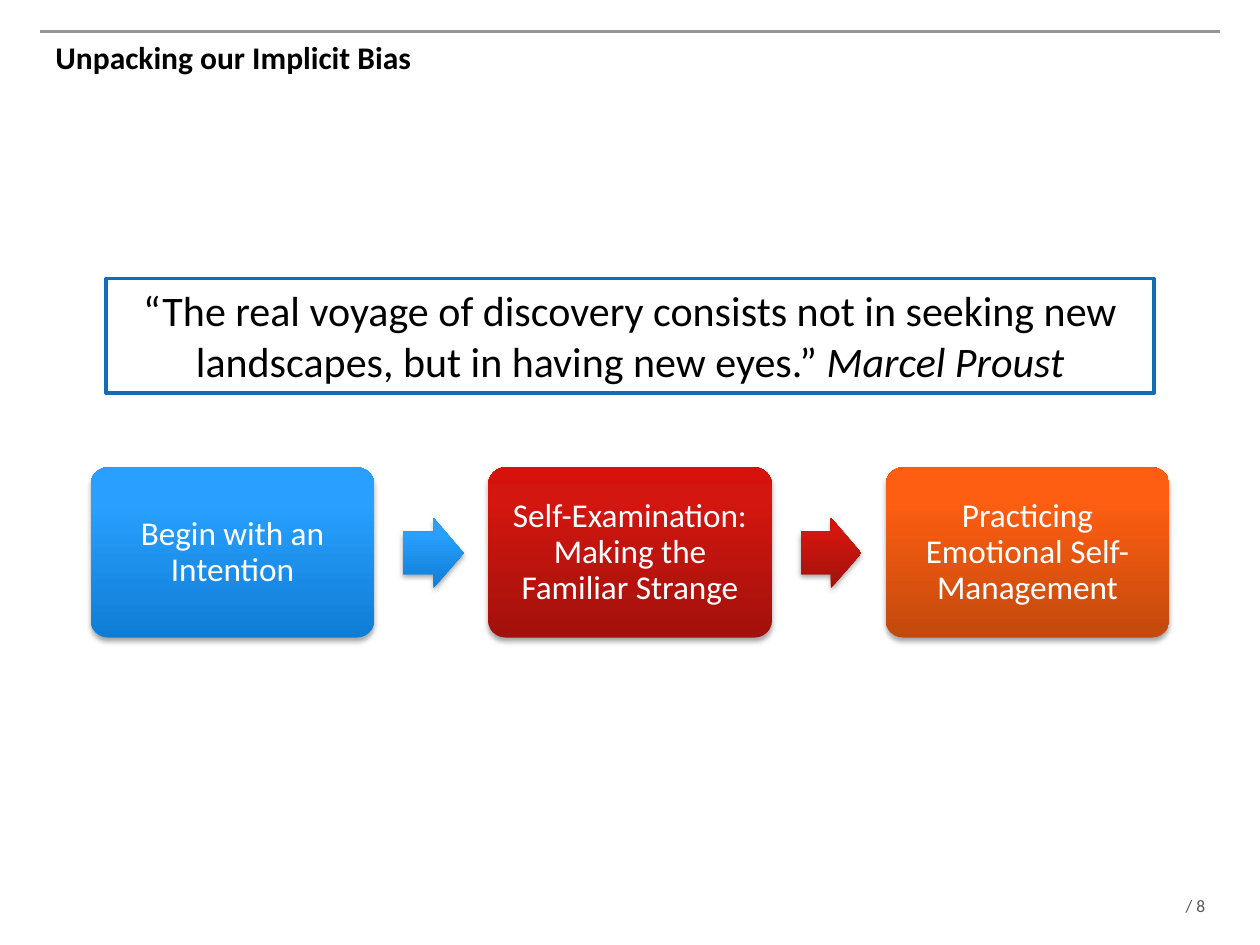
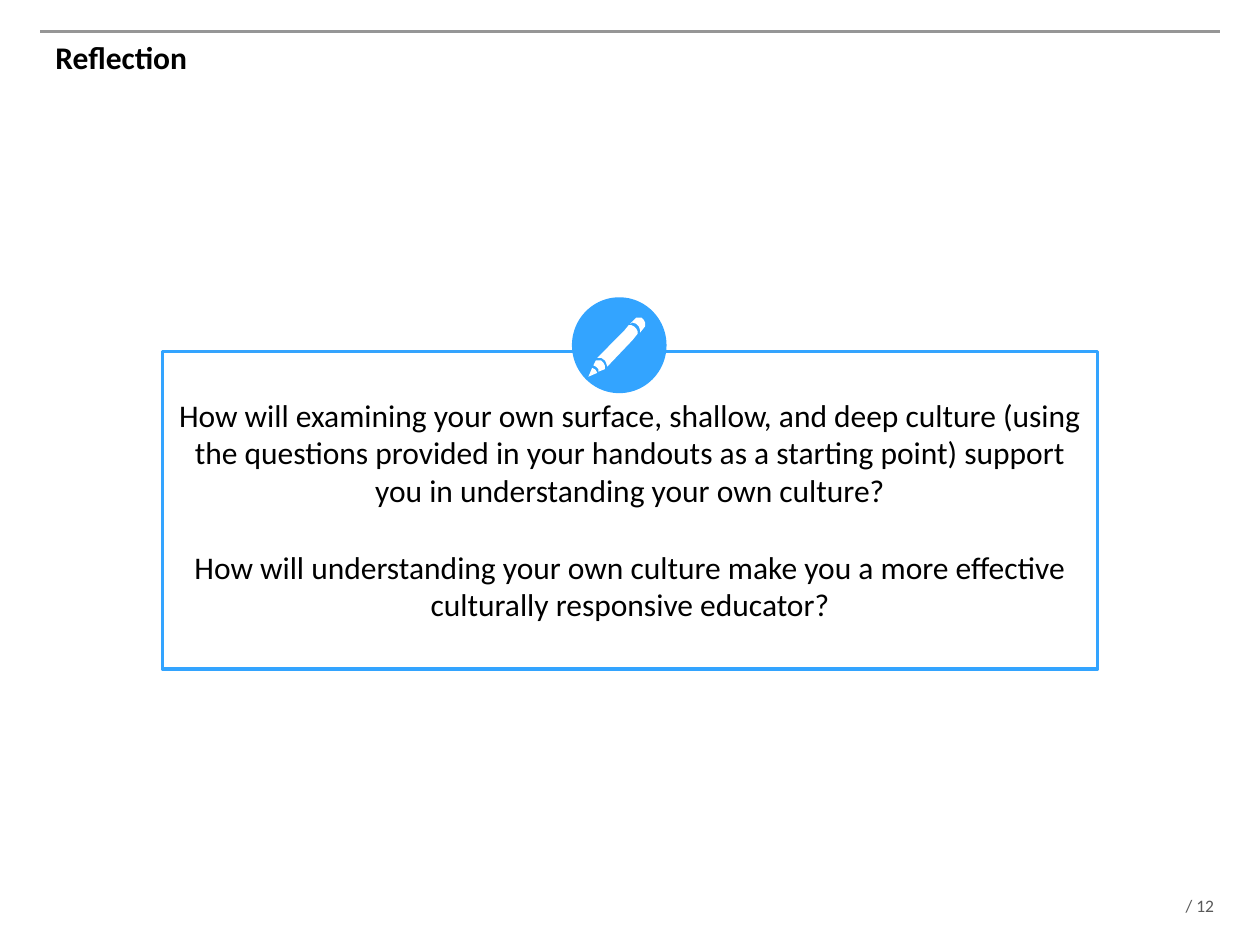
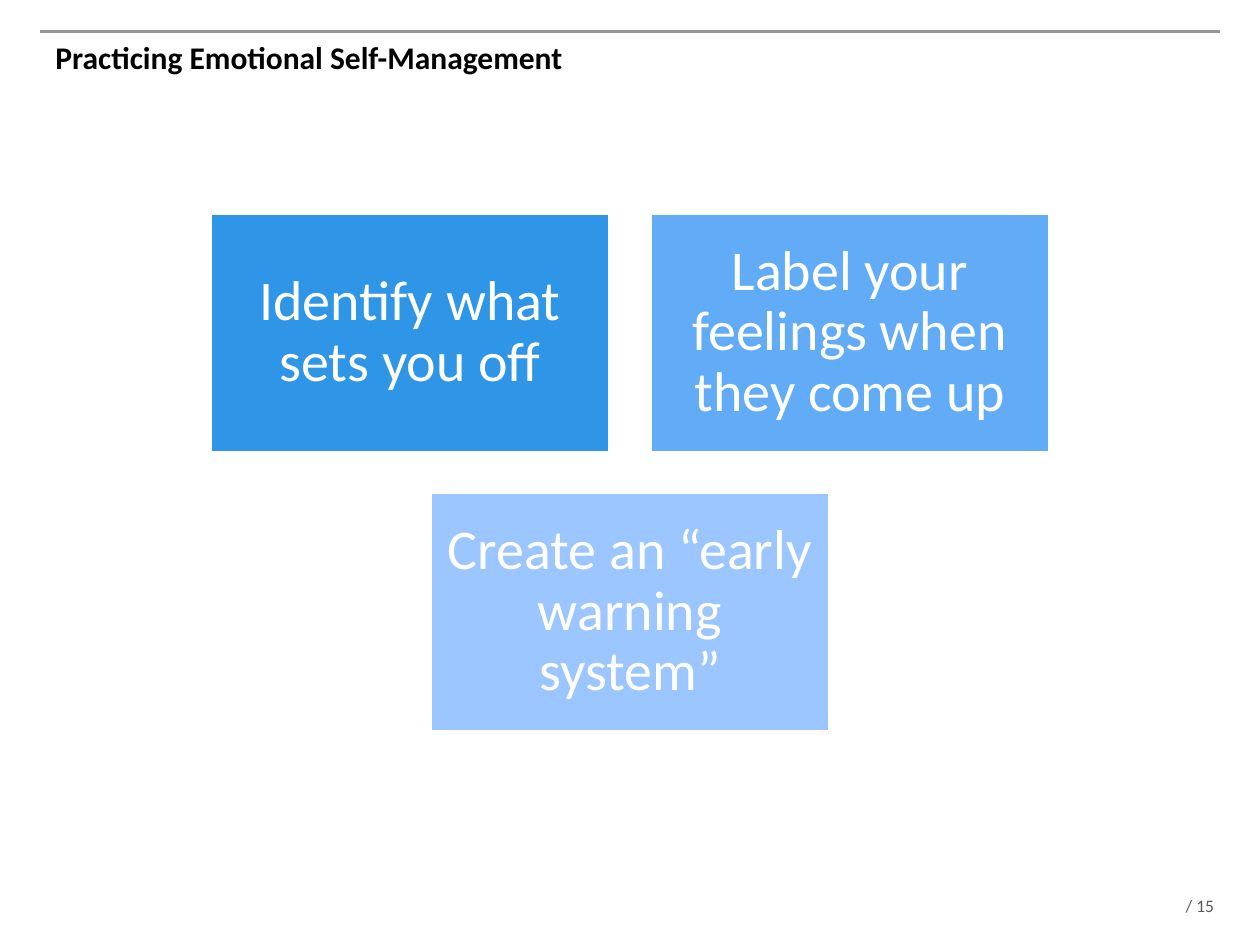
"""Builds three slides on implicit bias, reflection and emotional self-management."""
from copy import deepcopy
from dataclasses import dataclass

from lxml.etree import SubElement
from pptx import Presentation
from pptx.dml.color import RGBColor
from pptx.enum.shapes import MSO_CONNECTOR, MSO_SHAPE
from pptx.enum.text import MSO_ANCHOR, PP_ALIGN
from pptx.oxml.ns import qn
from pptx.util import Inches, Pt

FONT = "Calibri"
BLACK = "000000"
WHITE = "FFFFFF"
GRAY = "595959"
RULE_GRAY = "969696"
DEEP_BLUE = "126DB6"
SKY_BLUE = "33A4FF"

SLIDE_WIDTH = 10
GRADIENT_POSITIONS = (0, 0.8, 1)


@dataclass(frozen=True)
class Box:
    left: float
    top: float
    width: float
    height: float

    def emu(self):
        return [Inches(n) for n in (self.left, self.top, self.width, self.height)]


@dataclass(frozen=True)
class Step:
    text: str
    gradient: tuple[str, str, str]


@dataclass(frozen=True)
class Tile:
    text: str
    color: str


STEPS = [
    Step("Begin with an Intention", ("0F7DD5", "29A0FF", "2BA0FF")),
    Step("Self-Examination: Making the Familiar Strange", ("A2110C", "D3160F", "D7120C")),
    Step("Practicing Emotional Self-Management", ("C3490D", "FD5E11", "FF5E11")),
]

QUESTIONS = [
    "How will examining your own surface, shallow, and deep culture (using the questions "
    "provided in your handouts as a starting point) support you in understanding your own culture?",
    "How will understanding your own culture make you a more effective culturally "
    "responsive educator?",
]

TILE_ROWS = [
    [Tile("Identify what sets you off", "2E95E7"),
     Tile("Label your feelings when they come up", "61ABF7")],
    [Tile("Create an “early warning system”", "9BC6FF")],
]

PENCIL_PARTS = {
    "collar": [(4.75, 2.95), (4.8, 2.93), (4.8, 2.9), (4.79, 2.88), (4.77, 2.86),
               (4.75, 2.86), (4.73, 2.86), (4.71, 2.9), (4.73, 2.91), (4.75, 2.93)],
    "tip": [(4.7, 2.92), (4.67, 2.99), (4.74, 2.96), (4.73, 2.94), (4.72, 2.93)],
    "eraser": [(5, 2.57), (5.02, 2.56), (5.05, 2.57), (5.07, 2.59), (5.08, 2.62),
               (5.08, 2.64), (5.12, 2.59), (5.12, 2.56), (5.11, 2.54), (5.09, 2.52),
               (5.07, 2.52), (5.05, 2.52)],
    "barrel": [(5.06, 2.63), (5.05, 2.61), (5.03, 2.59), (5.01, 2.58), (4.99, 2.58),
               (4.95, 2.63), (4.74, 2.84), (4.77, 2.84), (4.8, 2.86), (4.81, 2.88),
               (4.82, 2.91), (5.02, 2.7), (5.06, 2.65)],
}


def rgb(color: str) -> RGBColor:
    return RGBColor.from_string(color)


def style_paragraph(paragraph, size: float, color: str, align=PP_ALIGN.CENTER, bold=False) -> None:
    paragraph.alignment = align
    font = paragraph.font
    font.name = FONT
    font.size = Pt(size)
    font.bold = bold
    font.color.rgb = rgb(color)


def style_shape(shape, fill: str | None, line: str | None = None, line_width: float = 2) -> None:
    shape.shadow.inherit = False
    if fill:
        shape.fill.solid()
        shape.fill.fore_color.rgb = rgb(fill)
    if line:
        shape.line.color.rgb = rgb(line)
        shape.line.width = Pt(line_width)
    else:
        shape.line.fill.background()


def add_box(slide, kind, box: Box, fill: str | None, line: str | None = None):
    shape = slide.shapes.add_shape(kind, *box.emu())
    style_shape(shape, fill, line)
    shape.text_frame.word_wrap = True
    shape.text_frame.vertical_anchor = MSO_ANCHOR.TOP
    return shape


def set_centered_text(shape, text: str, size: float, inset: float) -> None:
    frame = shape.text_frame
    frame.vertical_anchor = MSO_ANCHOR.MIDDLE
    frame.margin_left = frame.margin_right = Inches(inset)
    frame.margin_top = frame.margin_bottom = Inches(inset)
    paragraph = frame.paragraphs[0]
    paragraph.text = text
    paragraph.line_spacing = 0.9
    style_paragraph(paragraph, size, WHITE)


def set_gradient(shape, colors: tuple[str, str, str]) -> None:
    shape.fill.gradient()
    shape.fill.gradient_angle = 90
    stop_list = shape._element.spPr.find(qn("a:gradFill")).find(qn("a:gsLst"))
    stop_list.append(deepcopy(stop_list[0]))
    for stop, position, color in zip(shape.fill.gradient_stops, GRADIENT_POSITIONS, colors):
        stop.position = position
        stop.color.rgb = rgb(color)


def add_soft_shadow(shape) -> None:
    effects = shape._element.spPr.find(qn("a:effectLst"))
    shadow = SubElement(effects, qn("a:outerShdw"), blurRad=str(Pt(3.1)), dist=str(Pt(1.8)),
                        dir="5400000", rotWithShape="0")
    color = SubElement(shadow, qn("a:srgbClr"), val=BLACK)
    SubElement(color, qn("a:alpha"), val="35000")


def add_gradient_shape(slide, kind, box: Box, adjustments: list[float], step: Step):
    shape = add_box(slide, kind, box, None)
    for index, value in enumerate(adjustments):
        shape.adjustments[index] = value
    set_gradient(shape, step.gradient)
    add_soft_shadow(shape)
    return shape


def add_base_slide(presentation, title_text: str, number: int):
    slide = presentation.slides.add_slide(presentation.slide_layouts[5])

    rule = slide.shapes.add_connector(
        MSO_CONNECTOR.STRAIGHT, Inches(0.33), Inches(0.25), Inches(9.67), Inches(0.25))
    rule.line.color.rgb = rgb(RULE_GRAY)
    rule.line.width = Pt(2)
    rule._element.spPr.find(qn("a:ln")).set("cap", "sq")
    SubElement(rule._element.spPr, qn("a:effectLst"))

    title = slide.shapes.title
    title.left, title.top, title.width, title.height = Box(0.34, 0.25, 9.32, 0.92).emu()
    title.text_frame.text = title_text
    title.text_frame.vertical_anchor = MSO_ANCHOR.TOP
    style_paragraph(title.text_frame.paragraphs[0], 18, BLACK, PP_ALIGN.LEFT, bold=True)

    footer = slide.shapes.add_textbox(*Box(9.41, 7.1, 0.5, 0.17).emu()).text_frame
    footer.margin_left = footer.margin_right = footer.margin_top = footer.margin_bottom = 0
    footer.word_wrap = True
    footer.text = f"/ {number}"
    style_paragraph(footer.paragraphs[0], 10, GRAY, PP_ALIGN.LEFT)
    return slide


def build_bias_slide(presentation) -> None:
    slide = add_base_slide(presentation, "Unpacking our Implicit Bias", 8)

    quote = add_box(slide, MSO_SHAPE.RECTANGLE, Box(0.84, 2.21, 8.32, 0.91), WHITE, DEEP_BLUE)
    paragraph = quote.text_frame.paragraphs[0]
    paragraph.add_run().text = ("“The real voyage of discovery consists not in seeking new "
                                "landscapes, but in having new eyes.” ")
    author = paragraph.add_run()
    author.text = "Marcel Proust"
    author.font.italic = True
    style_paragraph(paragraph, 24, BLACK)

    first_left, last_left, width = 0.72, 7.03, 2.25
    pitch = (last_left - first_left) / (len(STEPS) - 1)
    for index, step in enumerate(STEPS):
        left = first_left + index * pitch
        card = add_gradient_shape(slide, MSO_SHAPE.ROUNDED_RECTANGLE,
                                  Box(left, 3.71, width, 1.35), [0.1], step)
        set_centered_text(card, step.text, 19, 0.08)
        if index < len(STEPS) - 1:
            add_gradient_shape(slide, MSO_SHAPE.RIGHT_ARROW,
                               Box(left + width + 0.23, 4.11, 0.48, 0.56), [0.6, 0.5], step)


def add_pencil_badge(slide) -> None:
    circle = slide.shapes.add_shape(MSO_SHAPE.OVAL, *Box(4.55, 2.37, 0.73, 0.74).emu())
    style_shape(circle, SKY_BLUE, SKY_BLUE, 1.5)
    for points in PENCIL_PARTS.values():
        start, *rest = [(Inches(x), Inches(y)) for x, y in points]
        builder = slide.shapes.build_freeform(*start)
        builder.add_line_segments(rest, close=True)
        style_shape(builder.convert_to_shape(), WHITE)


def build_reflection_slide(presentation) -> None:
    slide = add_base_slide(presentation, "Reflection", 12)
    panel = add_box(slide, MSO_SHAPE.RECTANGLE, Box(1.29, 2.79, 7.42, 2.52), WHITE, SKY_BLUE)
    frame = panel.text_frame
    frame.margin_top = Inches(0.35)
    frame.text = "\n".join(QUESTIONS)
    for paragraph in frame.paragraphs:
        style_paragraph(paragraph, 18, BLACK)
    frame.paragraphs[1].space_before = Pt(22)
    add_pencil_badge(slide)


def build_management_slide(presentation) -> None:
    slide = add_base_slide(presentation, "Practicing Emotional Self-Management", 15)
    width, height, gap = 3.17, 1.9, 0.32
    for row_index, row in enumerate(TILE_ROWS):
        row_width = len(row) * width + (len(row) - 1) * gap
        top = 1.69 + row_index * (height + gap)
        for column, tile in enumerate(row):
            left = (SLIDE_WIDTH - row_width) / 2 + column * (width + gap)
            shape = add_box(slide, MSO_SHAPE.RECTANGLE, Box(left, top, width, height),
                            tile.color, WHITE)
            set_centered_text(shape, tile.text, 32, 0.12)


def main() -> None:
    presentation = Presentation()
    presentation.slide_width = Inches(SLIDE_WIDTH)
    presentation.slide_height = Inches(7.5)
    build_bias_slide(presentation)
    build_reflection_slide(presentation)
    build_management_slide(presentation)
    presentation.save("out.pptx")


if __name__ == "__main__":
    main()
